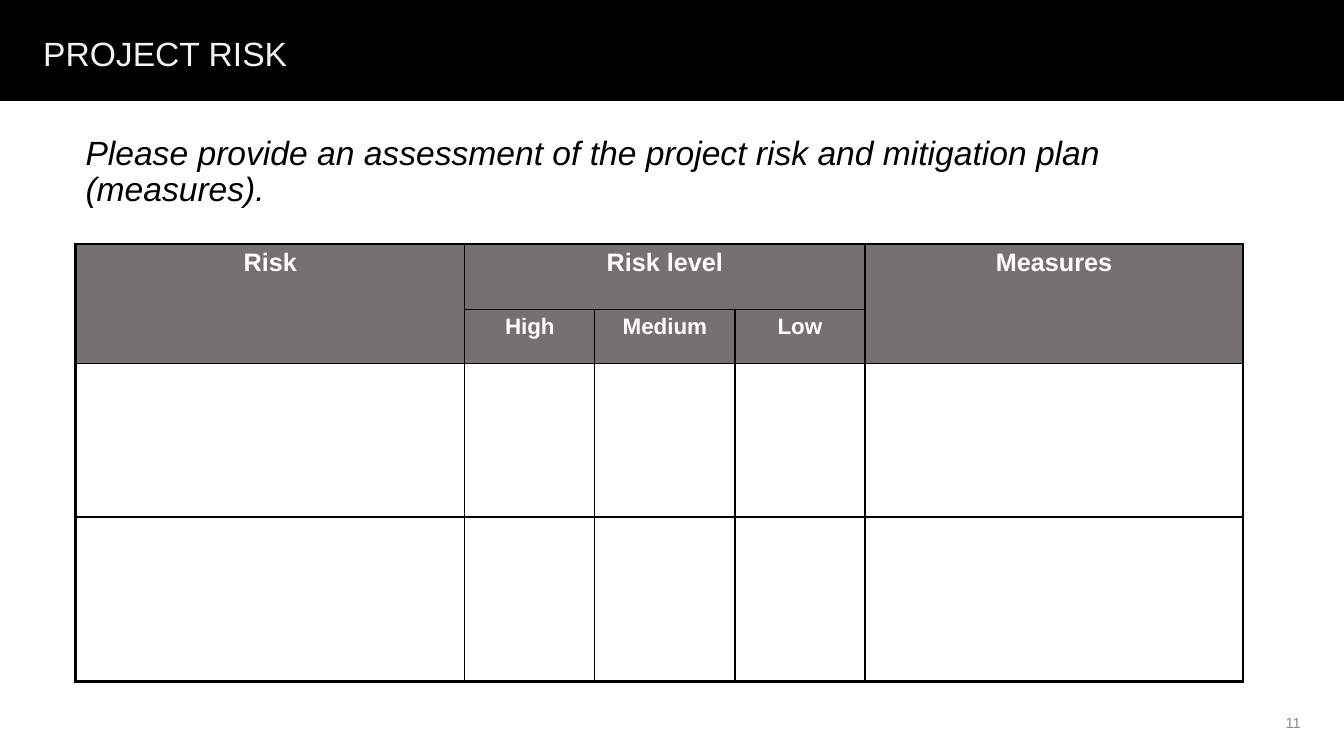
from pptx import Presentation
from pptx.dml.color import RGBColor
from pptx.enum.shapes import MSO_SHAPE
from pptx.enum.text import MSO_ANCHOR, PP_ALIGN
from pptx.oxml.ns import qn
from pptx.util import Inches, Pt
from lxml.etree import SubElement

# Content
TITLE = "PROJECT RISK"
PROMPT = ("Please provide an assessment of the project risk "
          "and mitigation plan (measures).")
PAGE = "11"
HEADS = [  # row, column, text, size
    (0, 0, "Risk", 18), (0, 1, "Risk level", 18), (0, 4, "Measures", 18),
    (1, 1, "High", 16), (1, 2, "Medium", 16), (1, 3, "Low", 16),
]
SPANS = [((0, 0), (1, 0)), ((0, 1), (0, 3)), ((0, 4), (1, 4))]
COLS = [3.86, 1.29, 1.39, 1.29, 3.75]
ROWS = [0.65, 0.54, 1.52, 1.63]
COLORS = {"black": "000000", "white": "FFFFFF", "head": "767171",
          "title": "F2F2F2", "page": "8C8C8C"}
THIN, THICK = 1, 2.25


def color(name):
    return RGBColor.from_string(COLORS[name])


def style(frame, text, size, tint, align=PP_ALIGN.LEFT, bold=False, italic=False):
    frame.text = text
    para = frame.paragraphs[0]
    para.alignment = align
    font = para.runs[0].font
    font.name, font.size = "Arial", Pt(size)
    font.bold, font.italic = bold, italic
    font.color.rgb = color(tint)


def box(area, anchor, *args, **kw):
    frame = slide.shapes.add_textbox(*map(Inches, area)).text_frame
    frame.word_wrap = True
    frame.vertical_anchor = anchor
    style(frame, *args, **kw)
    return frame


def border(cell, widths):
    props = cell._tc.get_or_add_tcPr()
    for i, (side, width) in enumerate(widths.items()):
        line = SubElement(props, qn("a:ln" + side), w=str(Pt(width)))
        fill = SubElement(line, qn("a:solidFill"))
        SubElement(fill, qn("a:srgbClr"), val=COLORS["black"])
        props.remove(line)
        props.insert(i, line)  # borders come before the fill


deck = Presentation()
deck.slide_width, deck.slide_height = Inches(13.33), Inches(7.5)
slide = deck.slides.add_slide(deck.slide_layouts[6])

# Prompt
prompt = box((0.75, 1.59, 11.67, 0.6), MSO_ANCHOR.BOTTOM,
             PROMPT, 24, "black", italic=True)
prompt.margin_bottom = Inches(0.12)
prompt.paragraphs[0].line_spacing = 0.9

# Risk table
area = (0.75, 2.42, sum(COLS), sum(ROWS))
table = slide.shapes.add_table(len(ROWS), len(COLS), *map(Inches, area)).table
table.first_row = table.horz_banding = False
for col, width in zip(table.columns, COLS):
    col.width = Inches(width)
for row, height in zip(table.rows, ROWS):
    row.height = Inches(height)
for r in range(len(ROWS)):
    for c in range(len(COLS)):
        cell = table.cell(r, c)
        cell.fill.solid()
        cell.fill.fore_color.rgb = color("head" if r < 2 else "white")
        edges = {"L": c == 0, "R": c == len(COLS) - 1,
                 "T": r == 0, "B": r == len(ROWS) - 1}
        border(cell, {side: THICK if outer else THIN
                      for side, outer in edges.items()})
for start, end in SPANS:
    table.cell(*start).merge(table.cell(*end))
for r, c, text, size in HEADS:
    style(table.cell(r, c).text_frame, text, size, "white",
          PP_ALIGN.CENTER, bold=True)

# Title band
band = slide.shapes.add_shape(MSO_SHAPE.RECTANGLE, 0, 0, deck.slide_width, Inches(1))
band.shadow.inherit = False
band.fill.solid()
band.fill.fore_color.rgb = color("black")
band.line.color.rgb = color("black")
band.line.width = Pt(1)
box((0.33, 0.28, 11.42, 0.5), MSO_ANCHOR.TOP, TITLE, 24, "title")

# Page number
box((10, 6.97, 3, 0.4), MSO_ANCHOR.MIDDLE, PAGE, 10.5, "page", PP_ALIGN.RIGHT)

deck.save("out.pptx")
